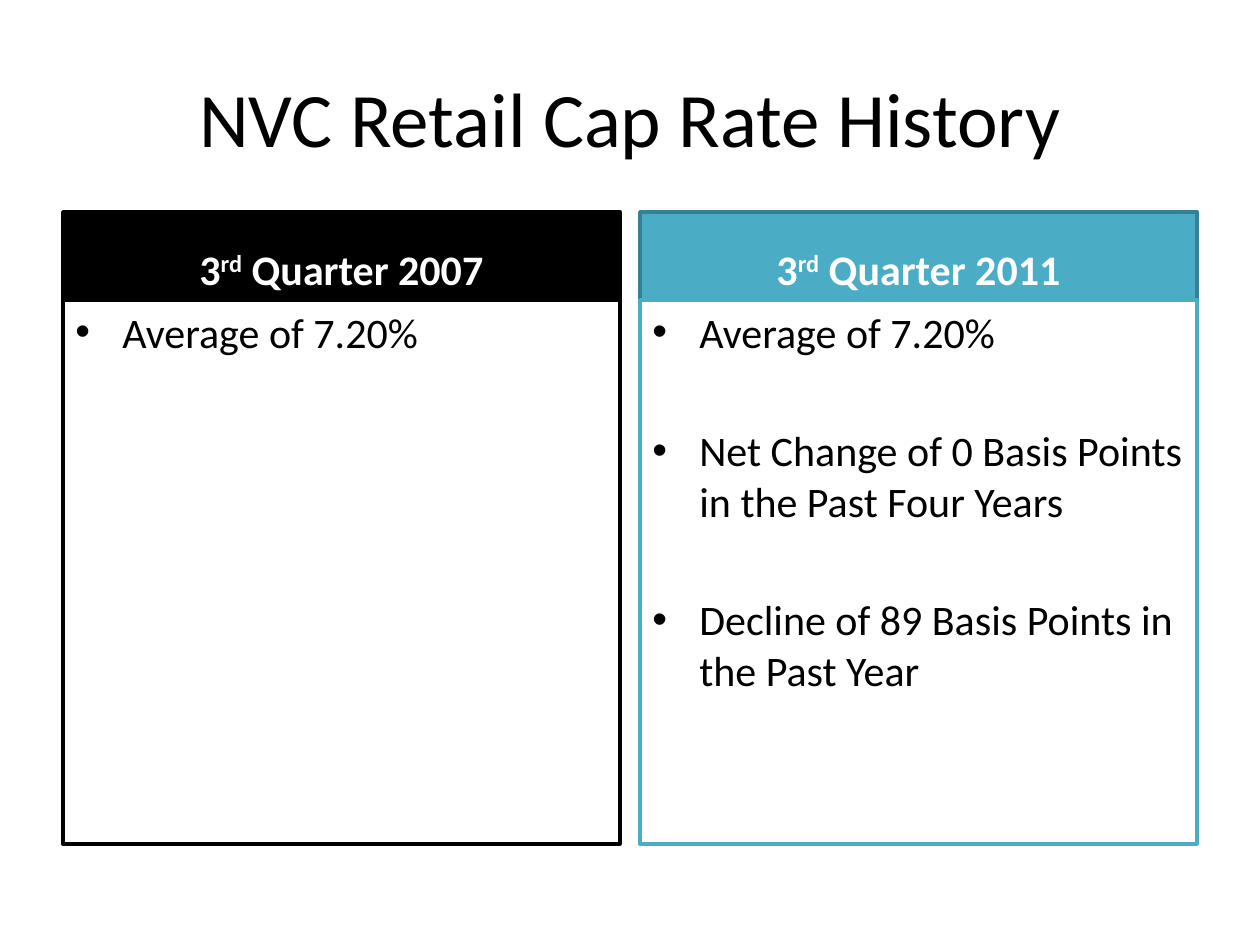
from dataclasses import dataclass

from lxml import etree
from pptx import Presentation
from pptx import util as u
from pptx.dml.color import RGBColor
from pptx.enum import shapes, text
from pptx.oxml.ns import qn

PX_PER_INCH = 126
FONT = "Calibri"
BLACK, WHITE, TEAL, DARK_TEAL = "000000", "FFFFFF", "4BACC6", "377F92"

MARGIN, COLUMN_WIDTH, COLUMN_GAP = 63, 557, 20
HEADER_TOP, HEADER_HEIGHT, BODY_HEIGHT = 212, 88, 544
BULLET_INDENT = 47


@dataclass
class Column:
    year: int
    fill: str
    header_line: str
    points: list[str]


COLUMNS = [
    Column(2007, BLACK, BLACK, ["Average of 7.20%"]),
    Column(2011, TEAL, DARK_TEAL, [
        "Average of 7.20%",
        "Net Change of 0 Basis Points in the Past Four Years",
        "Decline of 89 Basis Points in the Past Year",
    ]),
]


def px(length: int) -> u.Emu:
    return u.Emu(round(length * u.Inches(1) / PX_PER_INCH))


def color(value: str) -> RGBColor:
    return RGBColor.from_string(value)


def add_span(para, words: str, *, size: int = 24, ink: str = BLACK,
             bold: bool = False, raised: bool = False) -> None:
    span = para.add_run()
    span.text = words
    span.font.name = FONT
    span.font.size = u.Pt(size)
    span.font.bold = bold
    span.font.color.rgb = color(ink)
    if raised:
        span.font._element.set("baseline", "30000")


def add_panel(page, left: int, top: int, height: int, fill: str, line: str,
              anchor: text.MSO_ANCHOR):
    """Add a column-wide rectangle and return its text frame."""
    box = page.shapes.add_shape(shapes.MSO_SHAPE.RECTANGLE, px(left), px(top),
                                px(COLUMN_WIDTH), px(height))
    box.shadow.inherit = False
    box.fill.solid()
    box.fill.fore_color.rgb = color(fill)
    box.line.color.rgb = color(line)
    box.line.width = u.Pt(2)
    frame = box.text_frame
    frame.word_wrap = True
    frame.vertical_anchor = anchor
    return frame


def add_bullet(para) -> None:
    properties = para._p.get_or_add_pPr()
    properties.set("marL", str(px(BULLET_INDENT)))
    properties.set("indent", str(-px(BULLET_INDENT)))
    etree.SubElement(properties, qn("a:buFont"), typeface="Arial")
    etree.SubElement(properties, qn("a:buChar"), char="•")


def add_column(page, left: int, column: Column) -> None:
    header = add_panel(page, left, HEADER_TOP, HEADER_HEIGHT, column.fill,
                       column.header_line, text.MSO_ANCHOR.BOTTOM)
    para = header.paragraphs[0]
    para.alignment = text.PP_ALIGN.CENTER
    for words, raised in (("3", False), ("rd", True),
                          (f" Quarter {column.year}", False)):
        add_span(para, words, ink=WHITE, bold=True, raised=raised)

    body = add_panel(page, left, HEADER_TOP + HEADER_HEIGHT, BODY_HEIGHT, WHITE,
                     column.fill, text.MSO_ANCHOR.TOP)
    for index, point in enumerate(column.points):
        para = body.add_paragraph() if index else body.paragraphs[0]
        add_bullet(para)
        para.alignment = text.PP_ALIGN.LEFT
        if index:
            para.space_before = u.Pt(39)
        add_span(para, point)


def add_title(page, words: str) -> None:
    title = page.shapes.title
    title.left, title.top = px(MARGIN), px(38)
    title.width, title.height = px(2 * COLUMN_WIDTH + COLUMN_GAP), px(158)
    title.text_frame.vertical_anchor = text.MSO_ANCHOR.MIDDLE
    para = title.text_frame.paragraphs[0]
    para.alignment = text.PP_ALIGN.CENTER
    add_span(para, words, size=44)


def main() -> None:
    deck = Presentation()
    deck.slide_width, deck.slide_height = u.Inches(10), u.Inches(7.5)
    page = deck.slides.add_slide(deck.slide_layouts[5])
    add_title(page, "NVC Retail Cap Rate History")
    for index, column in enumerate(COLUMNS):
        add_column(page, MARGIN + index * (COLUMN_WIDTH + COLUMN_GAP), column)
    deck.save("out.pptx")


if __name__ == "__main__":
    main()
